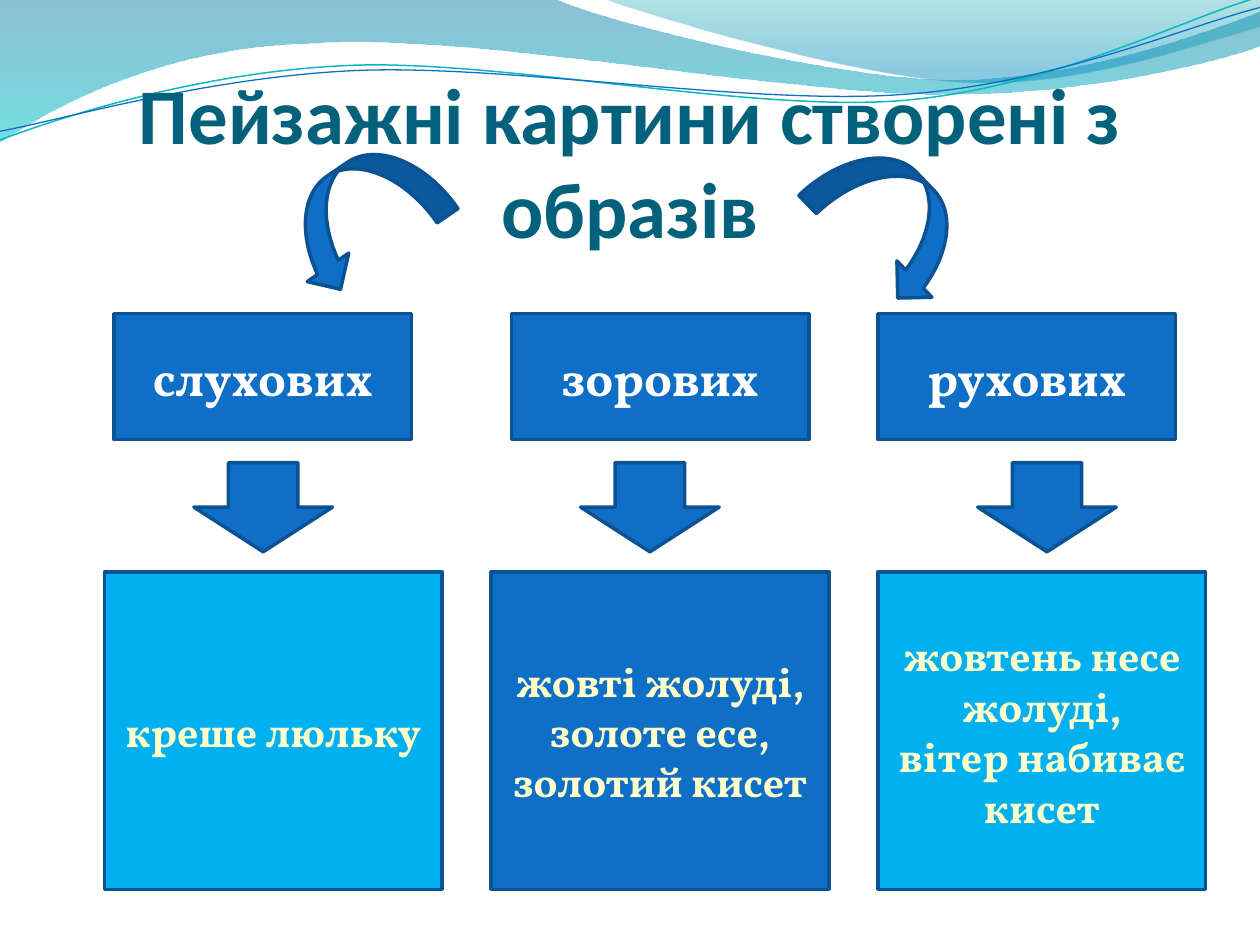
from dataclasses import dataclass
from math import cos, radians, sin

from lxml.etree import SubElement
from pptx import Presentation
from pptx.dml.color import RGBColor
from pptx.enum.shapes import MSO_SHAPE
from pptx.enum.text import MSO_ANCHOR, PP_ALIGN
from pptx.oxml.ns import qn
from pptx.util import Pt


@dataclass(frozen=True)
class Theme:
    """Colours, fonts and sizes of the deck."""
    blue: str = "0F6FC6"
    edge: str = "0B5292"
    sky: str = "00B0F0"
    teal: str = "0AB8BF"
    title: str = "04617B"
    white: str = "FFFFFF"
    cream: str = "FFFFCC"
    heading_font: str = "Calibri"
    body_font: str = "Vollkorn"
    title_size: float = 45
    label_size: float = 28
    detail_size: float = 24
    edge_width: float = 2


@dataclass(frozen=True)
class Box:
    """A rectangle in points."""
    left: float
    top: float
    width: float
    height: float

    def inner(self, left, top, width, height):
        """Return a box placed relative to this one."""
        return Box(self.left + left, self.top + top, width, height)

    def lengths(self):
        """Return the four lengths for python-pptx."""
        return [Pt(value) for value in (self.left, self.top, self.width, self.height)]


THEME = Theme()
STRAND_TURN = 357.3
BANDS = [
    ([[(0, 0)], [(317, -0.7)],
      [(343, 12), (478, 45.4), (546, 45.4)], [(614, 45.4), (690, 18.7), (720, 6.5)],
      [(720.7, 26)],
      [(708, 31.7), (626, 54.7), (537, 54)], [(448, 54), (275, 20), (185, 24.5)],
      [(93, 26), (33, 60), (-0.7, 81.4)], [(0, 0)]],
     [(0, "0074A1", 45), (1, "00C6CF", 55)]),
    ([[(345, -0.7)],
      [(366.5, 8), (491, 44.6), (553.7, 46.8)], [(616, 49.7), (692, 23), (720, 15)],
      [(720, 0)], [(345, -0.7)]],
     [(0, "00A1A9", 30), (0.8, "008BBF", 45)]),
]
STRANDS = [
    ([[(0, 80)], [(34.6, 67), (113.8, 41), (199.4, 37.4)],
      [(284.4, 33.8), (427, 64), (513.4, 57.6)], [(599.8, 51), (675.4, 10.8), (718.6, -1.4)]],
     THEME.teal, 0.85, (359.3, 41.4)),
    ([[(0, 75)], [(33.8, 69), (118, 44), (203.8, 40.3)],
      [(290, 36.7), (430, 60.5), (516, 54)], [(602, 48.2), (677.5, 15), (720, 4.3)]],
     THEME.blue, 0.75, (360, 42.5)),
]
COLUMNS = [
    (59.7, 193, 5.5, 51.1, "слухових", THEME.sky, ["креше люльку"]),
    (280.7, 193, 11.5, 51.1, "зорових", THEME.blue,
     ["жовті жолуді,", "золоте есе,", "золотий кисет"]),
    (501.8, 187.2, 0, 56.9, "рухових", THEME.sky,
     ["жовтень несе жолуді,", "вітер набиває кисет"]),
]


def turn(segments, degrees, centre):
    """Turn all points of the segments clockwise about the centre."""
    c, s = cos(radians(degrees)), sin(radians(degrees))
    middle, level = centre
    return [[(middle + (x - middle) * c - (y - level) * s,
              level + (x - middle) * s + (y - level) * c) for x, y in segment]
            for segment in segments]


def add_wave(page, box, segments, closed):
    """Add an outline of lines and cubic curves relative to the box."""
    points = [(Pt(box.left + x), Pt(box.top + y)) for segment in segments for x, y in segment]
    builder = page.shapes.build_freeform(*points[0])
    builder.add_line_segments(points[1:], close=closed)
    wave = builder.convert_to_shape()
    wave.shadow.inherit = False
    nodes = wave.element.spPr.iter(qn("a:lnTo"))
    lines = iter(list(nodes))
    for segment in segments[1:]:
        group = [next(lines) for _ in segment]
        if len(group) == 3:
            curve = SubElement(group[0].getparent(), qn("a:cubicBezTo"))
            group[0].addprevious(curve)
            for line in group:
                curve.append(line[0])
                line.getparent().remove(line)
    return wave


def add_waves(page, box):
    """Draw the translucent bands and thin strands of the header."""
    for segments, stops in BANDS:
        band = add_wave(page, box, segments, True)
        band.line.fill.background()
        band.fill.gradient()
        band.fill.gradient_angle = 270
        for stop, (position, colour, _) in zip(band.fill.gradient_stops, stops):
            stop.position = position
            stop.color.rgb = RGBColor.from_string(colour)
        for node, (_, _, opacity) in zip(band.element.spPr.iter(qn("a:srgbClr")), stops):
            SubElement(node, qn("a:alpha")).set("val", str(opacity * 1000))
    for segments, colour, width, centre in STRANDS:
        strand = add_wave(page, box, turn(segments, -STRAND_TURN, centre), False)
        strand.rotation = STRAND_TURN
        strand.fill.background()
        strand.line.color.rgb = RGBColor.from_string(colour)
        strand.line.width = Pt(width)


def write(shape, lines, font, size, colour, **frame_values):
    """Write centred bold lines into a shape."""
    frame = shape.text_frame
    assign(frame, {"word_wrap": True, "vertical_anchor": MSO_ANCHOR.MIDDLE, **frame_values})
    for number, line in enumerate(lines):
        para = frame.add_paragraph() if number else frame.paragraphs[0]
        para.alignment = PP_ALIGN.CENTER
        span = para.add_run()
        span.text = line
        assign(span.font, {"name": font, "size": Pt(size), "bold": True})
        span.font.color.rgb = RGBColor.from_string(colour)


def assign(target, values):
    """Set each attribute of the target."""
    for name, value in values.items():
        setattr(target, name, value)


def add_title(page, box, text):
    """Place the slide title at the bottom of its box."""
    write(page.shapes.add_textbox(*box.lengths()), [text],
          THEME.heading_font, THEME.title_size, THEME.title,
          vertical_anchor=MSO_ANCHOR.BOTTOM, margin_left=0, margin_right=0,
          margin_top=Pt(3.6), margin_bottom=0)


def add_block(page, kind, box, fill=THEME.blue, rotation=0):
    """Add an outlined preset shape."""
    block = page.shapes.add_shape(kind, *box.lengths())
    block.rotation = rotation
    block.shadow.inherit = False
    block.fill.solid()
    block.fill.fore_color.rgb = RGBColor.from_string(fill)
    block.line.color.rgb = RGBColor.from_string(THEME.edge)
    block.line.width = Pt(THEME.edge_width)
    return block


def add_column(page, box, label_left, arrow_left, label, fill, details):
    """Stack a label, a down arrow and a detail panel."""
    heading = add_block(page, MSO_SHAPE.RECTANGLE, box.inner(label_left, 0, 170, 72))
    write(heading, [label], THEME.body_font, THEME.label_size, THEME.white)
    add_block(page, MSO_SHAPE.DOWN_ARROW, box.inner(arrow_left, 85, 79.2, 51))
    panel = add_block(page, MSO_SHAPE.RECTANGLE, box.inner(0, 147.5, box.width, 181.4), fill)
    write(panel, details, THEME.body_font, THEME.detail_size, THEME.cream)


def add_curved_arrows(page, box):
    """Add the two bent arrows that lead from the title."""
    add_block(page, MSO_SHAPE.CURVED_RIGHT_ARROW, box.inner(0, 0, 57.6, 95.8), rotation=55.5)
    add_block(page, MSO_SHAPE.CURVED_LEFT_ARROW, box.inner(304.6, 3.6, 57.6, 95.8),
              rotation=316.1)


def main():
    """Build and save the slide."""
    deck = Presentation()
    assign(deck, {"slide_width": Pt(720), "slide_height": Pt(540)})
    page = deck.slides.add_slide(deck.slide_layouts[6])
    add_waves(page, Box(0, 0, 720, 82))
    add_title(page, Box(36, 55.4, 648, 90), "Пейзажні картини створені з образів")
    for left, width, *content in COLUMNS:
        add_column(page, Box(left, 179.3, width, 329), *content)
    add_curved_arrows(page, Box(177.1, 74.7, 362, 100))
    deck.save("out.pptx")


if __name__ == "__main__":
    main()
